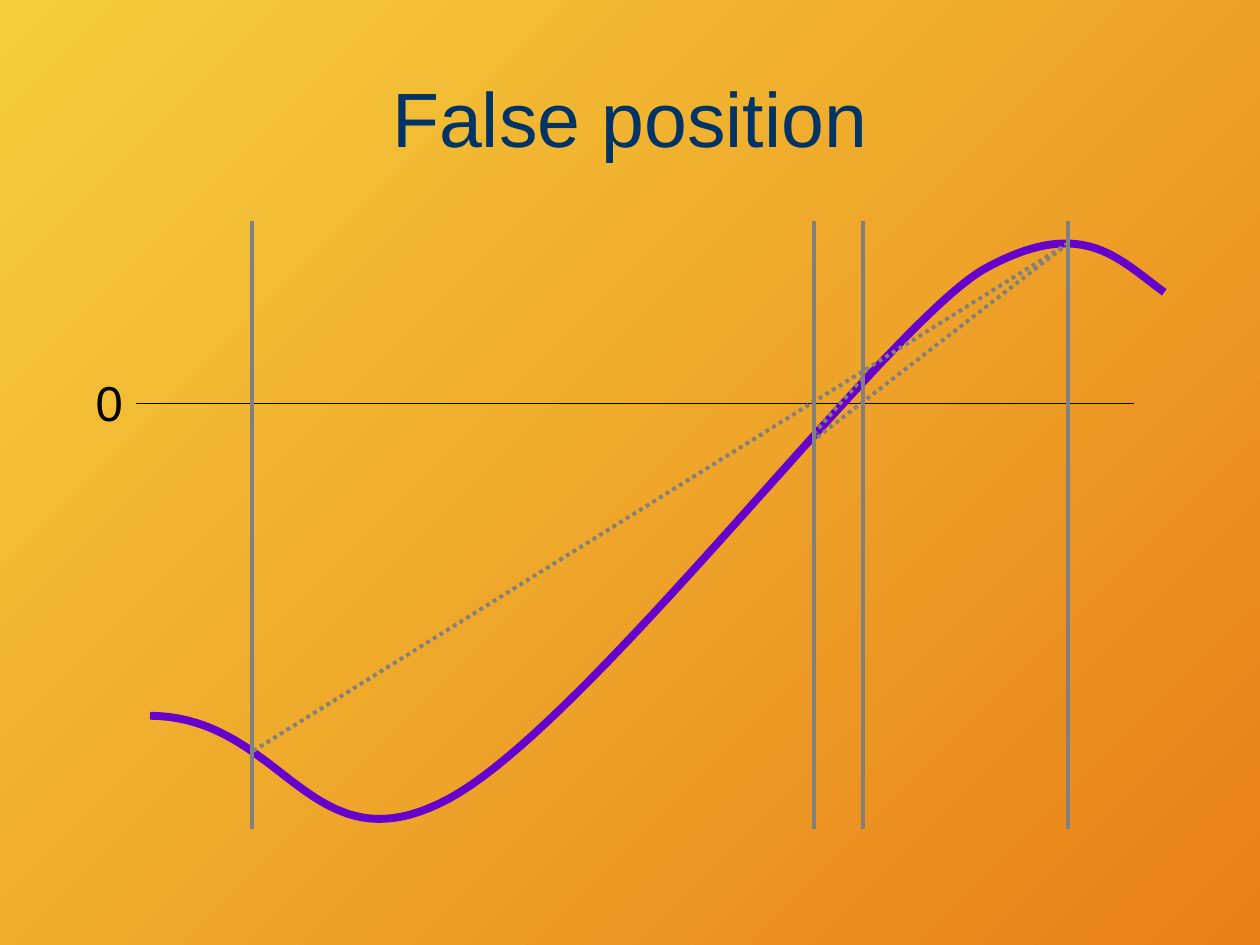
from lxml.etree import SubElement
from pptx import Presentation
from pptx.dml.color import RGBColor
from pptx.enum.dml import MSO_LINE
from pptx.enum.shapes import MSO_CONNECTOR
from pptx.enum.text import MSO_ANCHOR, PP_ALIGN
from pptx.oxml.ns import qn
from pptx.util import Pt


def color(value):
    return RGBColor.from_string(value)


def add_line(start, end, value, width, dash=None):
    line = page.shapes.add_connector(
        MSO_CONNECTOR.STRAIGHT, *(Pt(number) for number in (*start, *end)))
    line.line.color.rgb = color(value)
    line.line.width = Pt(width)
    if dash:
        line.line.dash_style = dash
    SubElement(line._element.spPr, qn("a:effectLst"))


deck = Presentation()
deck.slide_width, deck.slide_height = Pt(720), Pt(540)
page = deck.slides.add_slide(deck.slide_layouts[6])

# Background, running from the top left to the bottom right
background = page.background.fill
background.gradient()
background.gradient_angle = 315
for stop, value, position in zip(background.gradient_stops, ("F5CE3D", "E88018"), (0, 1)):
    stop.color.rgb = color(value)
    stop.position = position

# Zero axis
add_line((77.8, 230.4), (648, 230.4), "000000", 0.75)

# Title and axis label
texts = [
    ("False position", (36, 21.6, 648, 90), 44, "003366", PP_ALIGN.CENTER, MSO_ANCHOR.MIDDLE, True),
    ("0", (47.5, 209.5, 30.2, 41), 28, "000000", PP_ALIGN.LEFT, MSO_ANCHOR.TOP, False),
]
for text, area, size, value, align, anchor, wrap in texts:
    box = page.shapes.add_textbox(*(Pt(number) for number in area))
    box.text_frame.word_wrap = wrap
    box.text_frame.vertical_anchor = anchor
    para = box.text_frame.paragraphs[0]
    para.text = text
    para.alignment = align
    para.font.name = "Arial"
    para.font.size = Pt(size)
    para.font.color.rgb = color(value)

# Function curve: three joined cubic Bézier pieces, sampled finely
knots = [(85.7, 409), (162.7, 409.7), (177.1, 499), (256.3, 456.5),
         (336.2, 414), (508.3, 183.6), (563, 153.4),
         (618.5, 123.1), (638.6, 147.6), (665.3, 167)]
steps = 40
points = []
for first in range(0, len(knots) - 1, 3):
    for step in range(1, steps + 1):
        t = step / steps
        weights = ((1 - t) ** 3, 3 * t * (1 - t) ** 2, 3 * t ** 2 * (1 - t), t ** 3)
        points.append(tuple(
            Pt(sum(weight * knot[axis] for weight, knot in zip(weights, knots[first:first + 4])))
            for axis in (0, 1)))
builder = page.shapes.build_freeform(Pt(knots[0][0]), Pt(knots[0][1]))
builder.add_line_segments(points, close=False)
curve = builder.convert_to_shape()
curve.shadow.inherit = False
curve.fill.background()
curve.line.color.rgb = color("6600CC")
curve.line.width = Pt(4.5)

# Interval bounds and successive estimates
for x in (144, 610.5, 465.1, 493):
    add_line((x, 126), (x, 473.8), "808080", 2.25)

# Secants between the bounds
peak = (610.5, 139)
secants = [(peak, (144.7, 429.1)), (peak, (465.1, 251.3)), ((493, 216), (465.1, 247.7))]
for start, end in secants:
    add_line(start, end, "808080", 2.25, MSO_LINE.ROUND_DOT)

deck.save("out.pptx")
